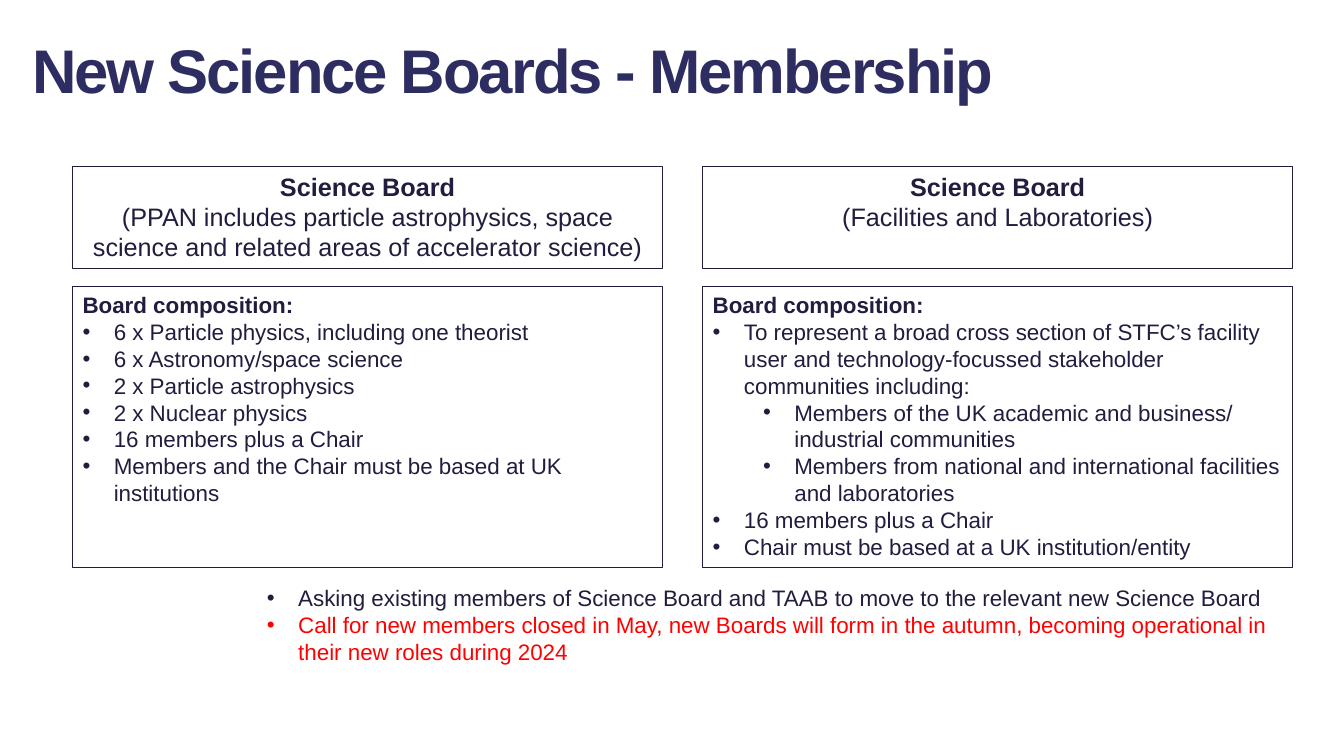
from pptx import Presentation
from pptx.dml.color import RGBColor
from pptx.enum.shapes import MSO_SHAPE
from pptx.enum.text import MSO_ANCHOR, MSO_AUTO_SIZE, PP_ALIGN
from pptx.oxml.ns import qn
from pptx.util import Inches, Pt
from lxml import etree

RECTANGLE = MSO_SHAPE.RECTANGLE
TOP = MSO_ANCHOR.TOP
NO_AUTOFIT = MSO_AUTO_SIZE.NONE
LEFT, CENTER = PP_ALIGN.LEFT, PP_ALIGN.CENTER
TITLE_ONLY = 5

FONT = "Arial"
NAVY, INK, RED = "2E2D62", "201D3E", "FF0000"
COLUMN_LEFT, COLUMN_STEP, COLUMN_WIDTH = 0.72, 6.25, 5.85
HANGING = 0.31
LEVEL_INDENT = 0.5

# Each board: scope, then (level, text) for its composition
BOARDS = [
    ("(PPAN includes particle astrophysics, space science and related areas of accelerator science)", [
        (0, "6 x Particle physics, including one theorist"),
        (0, "6 x Astronomy/space science"),
        (0, "2 x Particle astrophysics"),
        (0, "2 x Nuclear physics"),
        (0, "16 members plus a Chair"),
        (0, "Members and the Chair must be based at UK institutions"),
    ]),
    ("(Facilities and Laboratories)", [
        (0, "To represent a broad cross section of STFC’s facility user and "
            "technology-focussed stakeholder communities including:"),
        (1, "Members of the UK academic and business/ industrial communities"),
        (1, "Members from national and international facilities and laboratories"),
        (0, "16 members plus a Chair"),
        (0, "Chair must be based at a UK institution/entity"),
    ]),
]
NEXT_STEPS = [
    ("Asking existing members of Science Board and TAAB to move to the relevant new Science Board", INK),
    ("Call for new members closed in May, new Boards will form in the autumn, "
     "becoming operational in their new roles during 2024", RED),
]


def rgb(color):
    return RGBColor.from_string(color)


def set_font(paragraph, size, color=INK, bold=False):
    font = paragraph.font
    font.name, font.size, font.bold = FONT, Pt(size), bold
    font.color.rgb = rgb(color)


def prepare_frame(shape):
    frame = shape.text_frame
    frame.word_wrap = True
    frame.auto_size = NO_AUTOFIT
    frame.vertical_anchor = TOP
    return frame


def add_line(frame, text, size, color=INK, bold=False, align=LEFT, bullet_level=None):
    """Fill the first empty paragraph of a frame, or append a new one."""
    paragraph = frame.paragraphs[0]
    if paragraph.runs:
        paragraph = frame.add_paragraph()
    paragraph.add_run().text = text
    paragraph.alignment = align
    if bullet_level is not None:
        paragraph.level = bullet_level
        properties = paragraph._p.get_or_add_pPr()
        properties.set("marL", str(Inches(HANGING + LEVEL_INDENT * bullet_level)))
        properties.set("indent", str(-Inches(HANGING)))
        etree.SubElement(properties, qn("a:buFont")).set("typeface", FONT)
        etree.SubElement(properties, qn("a:buChar")).set("char", "•")
    set_font(paragraph, size, color, bold)


def add_title(slide, text):
    title = slide.shapes.title
    title.left, title.top = Inches(0.22), Inches(0.27)
    title.width, title.height = Inches(12.78), Inches(0.84)
    frame = prepare_frame(title)
    add_line(frame, text, 44, NAVY, bold=True)
    frame.paragraphs[0].runs[0]._r.get_or_add_rPr().set("spc", "-150")


def add_outlined_box(slide, left, top, height):
    box = slide.shapes.add_shape(
        RECTANGLE, Inches(left), Inches(top), Inches(COLUMN_WIDTH), Inches(height))
    box.shadow.inherit = False
    box.fill.background()
    box.line.color.rgb = rgb(INK)
    box.line.width = Pt(0.75)
    return prepare_frame(box)


def add_board(slide, left, scope, composition):
    heading = add_outlined_box(slide, left, 1.65, 1.01)
    add_line(heading, "Science Board", 18, bold=True, align=CENTER)
    add_line(heading, scope, 18, align=CENTER)
    body = add_outlined_box(slide, left, 2.84, 2.79)
    add_line(body, "Board composition:", 16, bold=True)
    for level, text in composition:
        add_line(body, text, 16, bullet_level=level)


def add_next_steps(slide):
    box = slide.shapes.add_textbox(Inches(2.55), Inches(5.75), Inches(10.27), Inches(0.91))
    frame = prepare_frame(box)
    for text, color in NEXT_STEPS:
        add_line(frame, text, 16, color, bullet_level=0)


def main():
    presentation = Presentation()
    presentation.slide_width, presentation.slide_height = Inches(13.33), Inches(7.5)
    slide = presentation.slides.add_slide(presentation.slide_layouts[TITLE_ONLY])
    add_title(slide, "New Science Boards - Membership")
    for column, (scope, composition) in enumerate(BOARDS):
        add_board(slide, COLUMN_LEFT + column * COLUMN_STEP, scope, composition)
    add_next_steps(slide)
    presentation.save("out.pptx")


if __name__ == "__main__":
    main()
